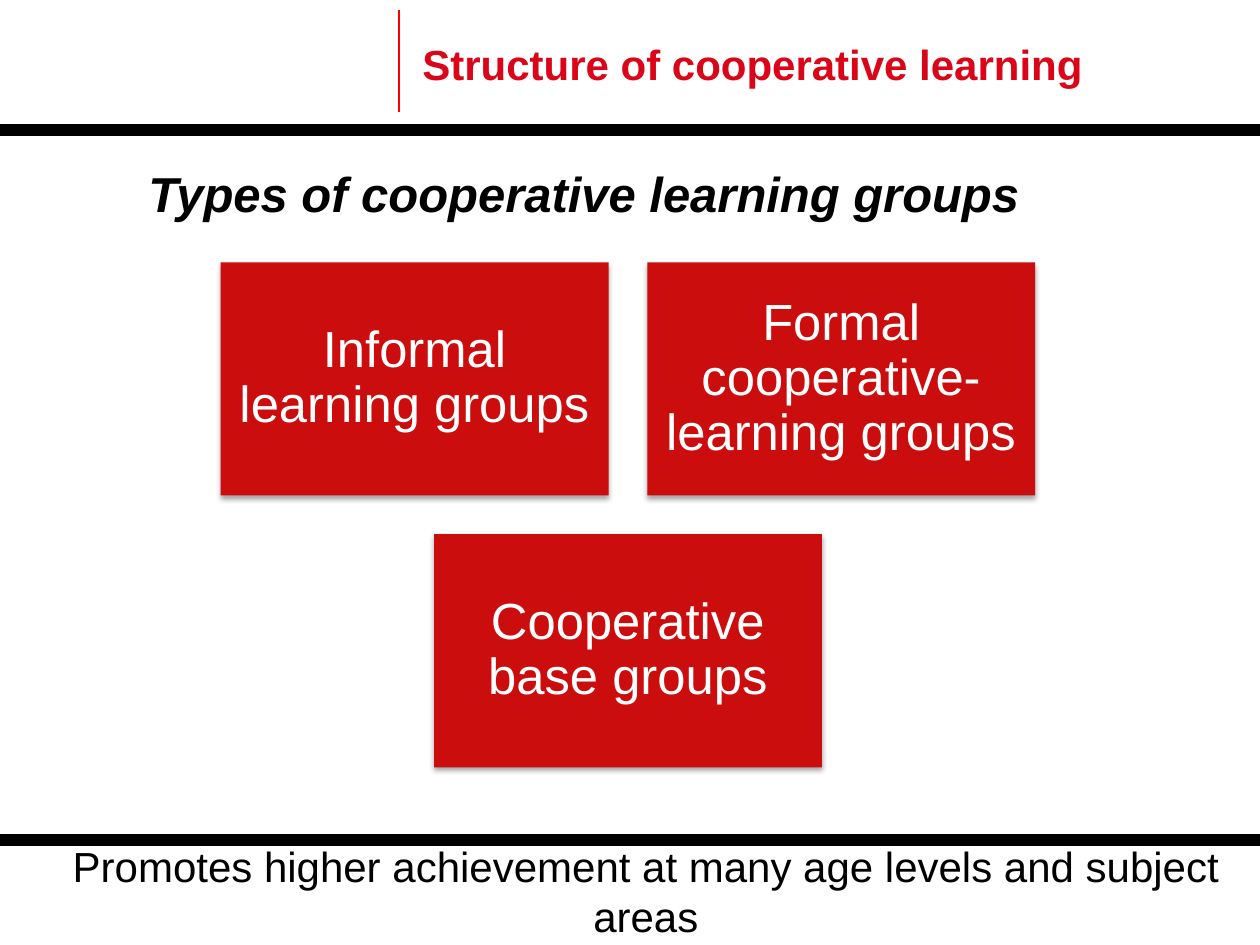
"""Build the slide on the structure of cooperative learning."""
from dataclasses import dataclass

from lxml import etree
from pptx import Presentation
from pptx import util as u
from pptx.dml import color as dml
from pptx.enum import shapes, text
from pptx.oxml import ns

RED, CARD_RED, RULE_RED = "DA0519", "CB0D0E", "FF0000"
BLACK, WHITE = "000000", "FFFFFF"
CARD_WIDTH, CARD_HEIGHT, CARD_GAP = 7.82, 4.7, 0.78
CARDS_LEFT, CARDS_TOP = 4.45, 5.29
INSET = 0.3


@dataclass
class Rule:
    start: tuple[float, float]
    end: tuple[float, float]
    color: str
    width: float


@dataclass
class Card:
    label: str
    column: float
    row: int


RULES = [
    Rule((8.05, 2.26), (8.05, 0.2), RULE_RED, 1.25),
    Rule((-0.05, 2.62), (25.43, 2.62), BLACK, 7),
    Rule((0, 16.94), (25.48, 16.94), BLACK, 7),
]
CARDS = [
    Card("Informal learning groups", 0, 0),
    Card("Formal cooperative-learning groups", 1, 0),
    Card("Cooperative base groups", 0.5, 1),
]


def rgb(value: str) -> dml.RGBColor:
    return dml.RGBColor.from_string(value)


def set_attributes(target, values: dict) -> None:
    for name, value in values.items():
        setattr(target, name, value)


def place(shape, left: float, top: float, width: float, height: float) -> None:
    set_attributes(shape, {"left": u.Cm(left), "top": u.Cm(top),
                           "width": u.Cm(width), "height": u.Cm(height)})


def write(shape, words: str, size: float, color: str, frame_format: dict,
          paragraph_format: dict, **font_format) -> None:
    frame = shape.text_frame
    frame.text = words
    set_attributes(frame, {"word_wrap": True, "auto_size": text.MSO_AUTO_SIZE.NONE,
                           **frame_format})
    paragraph = frame.paragraphs[0]
    set_attributes(paragraph, paragraph_format)
    font = paragraph.runs[0].font
    set_attributes(font, {"name": "Arial", "size": u.Pt(size), **font_format})
    font.color.rgb = rgb(color)


def add_rule(slide, rule: Rule) -> None:
    points = [u.Cm(value) for value in (*rule.start, *rule.end)]
    connector = slide.shapes.add_connector(shapes.MSO_CONNECTOR.STRAIGHT, *points)
    connector.line.color.rgb = rgb(rule.color)
    connector.line.width = u.Pt(rule.width)
    etree.SubElement(connector._element.spPr, ns.qn("a:effectLst"))


def add_soft_shadow(shape) -> None:
    shape.shadow.inherit = False
    effects = shape._element.spPr.find(ns.qn("a:effectLst"))
    shadow = etree.SubElement(effects, ns.qn("a:outerShdw"), {
        "blurRad": str(u.Pt(3.1)), "dist": str(u.Pt(1.8)),
        "dir": "5400000", "rotWithShape": "0"})
    tint = etree.SubElement(shadow, ns.qn("a:srgbClr"), val=BLACK)
    etree.SubElement(tint, ns.qn("a:alpha"), val="35000")


def add_card(slide, card: Card) -> None:
    left = CARDS_LEFT + card.column * (CARD_WIDTH + CARD_GAP)
    top = CARDS_TOP + card.row * (CARD_HEIGHT + CARD_GAP)
    shape = slide.shapes.add_shape(shapes.MSO_SHAPE.RECTANGLE, 0, 0, 0, 0)
    place(shape, left, top, CARD_WIDTH, CARD_HEIGHT)
    shape.fill.solid()
    shape.fill.fore_color.rgb = rgb(CARD_RED)
    shape.line.fill.background()
    add_soft_shadow(shape)
    margins = {f"margin_{side}": u.Cm(INSET)
               for side in ("left", "top", "right", "bottom")}
    write(shape, card.label, 29, WHITE,
          {"vertical_anchor": text.MSO_ANCHOR.MIDDLE, **margins},
          {"alignment": text.PP_ALIGN.CENTER, "line_spacing": 0.9})


def main() -> None:
    presentation = Presentation()
    set_attributes(presentation, {"slide_width": u.Cm(25.4), "slide_height": u.Cm(19.05)})
    slide = presentation.slides.add_slide(presentation.slide_layouts[5])

    for rule in RULES:
        add_rule(slide, rule)

    title = slide.shapes.title
    place(title, 8.26, 0.64, 13.97, 1.27)
    write(title, "Structure of cooperative learning", 24, RED,
          {"vertical_anchor": text.MSO_ANCHOR.MIDDLE},
          {"alignment": text.PP_ALIGN.LEFT}, bold=True)

    heading = slide.shapes.add_textbox(0, 0, 0, 0)
    place(heading, 2.74, 3.18, 18.52, 1.45)
    write(heading, "Types of cooperative learning groups", 28, BLACK,
          {}, {}, bold=True, italic=True)

    for card in CARDS:
        add_card(slide, card)

    conclusion = slide.shapes.add_textbox(0, 0, 0, 0)
    place(conclusion, 0.64, 16.81, 24.76, 2.31)
    write(conclusion,
          "Promotes higher achievement at many age levels and subject areas",
          24, BLACK, {}, {"alignment": text.PP_ALIGN.CENTER})

    presentation.save("out.pptx")


if __name__ == "__main__":
    main()
